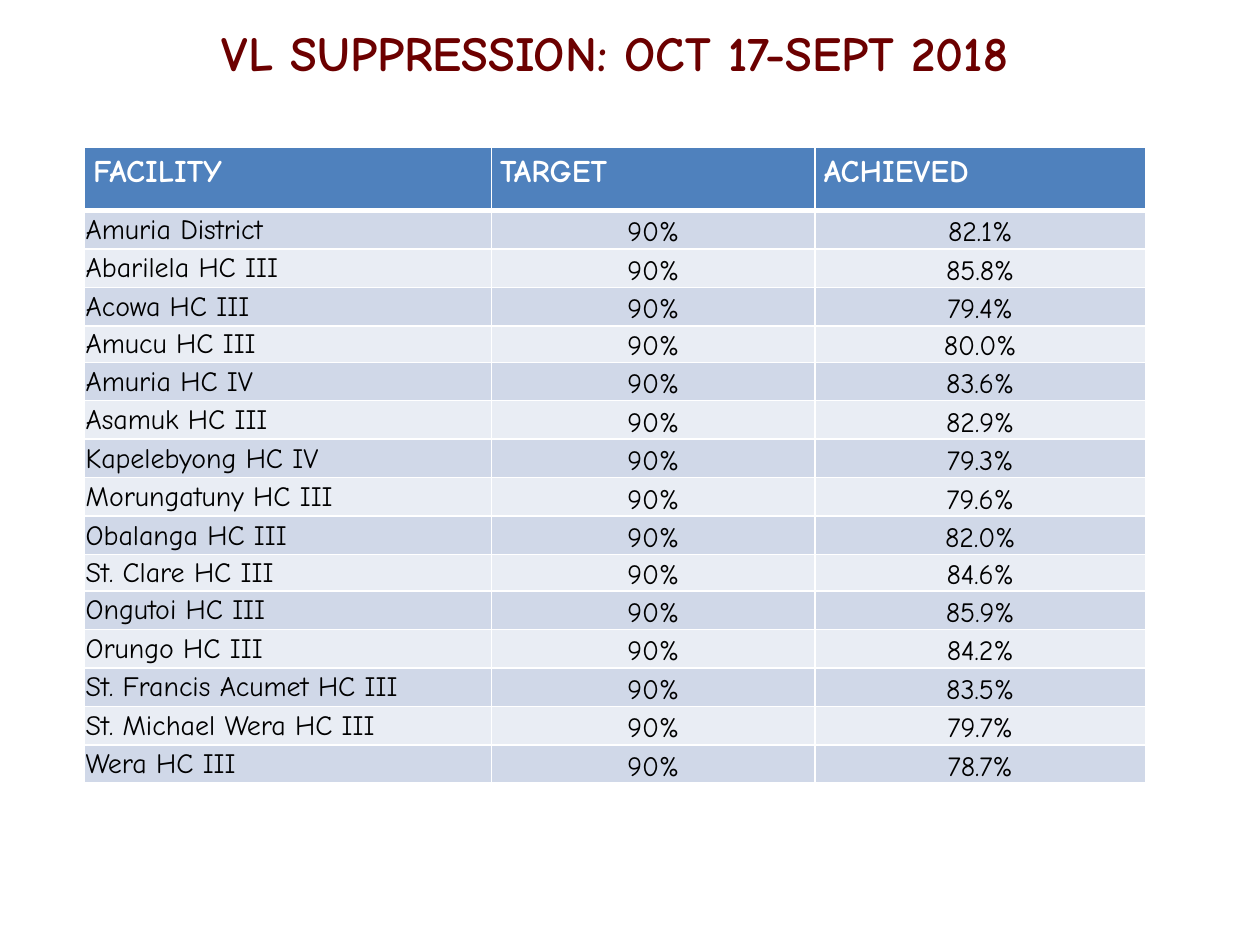
import pptx
import pptx.dml.color
import pptx.enum.text
import pptx.oxml
import pptx.oxml.ns
import pptx.util
from pptx.util import Inches

FONT = "Comic Neue"
ALIGN = pptx.enum.text.PP_ALIGN
ANCHOR = pptx.enum.text.MSO_ANCHOR

HEADER = ["FACILITY", "TARGET", "ACHIEVED"]
TARGET = "90%"
FACILITIES = [
    ("Amuria District", "82.1%"),
    ("Abarilela HC III", "85.8%"),
    ("Acowa HC III", "79.4%"),
    ("Amucu HC III", "80.0%"),
    ("Amuria HC IV", "83.6%"),
    ("Asamuk HC III", "82.9%"),
    ("Kapelebyong HC IV", "79.3%"),
    ("Morungatuny HC III", "79.6%"),
    ("Obalanga HC III", "82.0%"),
    ("St. Clare HC III", "84.6%"),
    ("Ongutoi HC III", "85.9%"),
    ("Orungo HC III", "84.2%"),
    ("St. Francis Acumet HC III", "83.5%"),
    ("St. Michael Wera HC III", "79.7%"),
    ("Wera HC III", "78.7%"),
]
COLUMN_WIDTHS = [3.23, 2.57, 2.62]
TABLE_HEIGHT = 5.05
HEADER_HEIGHT = 0.5
SHORT_HEIGHT = 0.29
SHORT_ROWS = (4, 10)


def rgb(value):
    return pptx.dml.color.RGBColor.from_string(value)


def write(tf, text, size=16, color="000000", bold=False, align=ALIGN.LEFT):
    p = tf.paragraphs[0]
    p.alignment = align
    r = p.add_run()
    r.text = text
    r.font.name = FONT
    r.font.size = pptx.util.Pt(size)
    r.font.bold = bold
    r.font.color.rgb = rgb(color)


def set_borders(cell, color="FFFFFF", top=1, bottom=1):
    tc_pr = cell._tc.get_or_add_tcPr()
    sides = [("lnL", 1), ("lnR", 1), ("lnT", top), ("lnB", bottom)]
    for i, (side, width) in enumerate(sides):
        line = pptx.oxml.parse_xml(
            f'<a:{side} {pptx.oxml.ns.nsdecls("a")} w="{pptx.util.Pt(width)}">'
            f'<a:solidFill><a:srgbClr val="{color}"/></a:solidFill></a:{side}>')
        tc_pr.insert(i, line)


def format_cell(cell, fill, anchor, margins, **borders):
    cell.fill.solid()
    cell.fill.fore_color.rgb = rgb(fill)
    cell.vertical_anchor = anchor
    (cell.margin_left, cell.margin_top,
     cell.margin_right, cell.margin_bottom) = map(Inches, margins)
    set_borders(cell, **borders)


def add_title(s, text):
    sp = s.shapes.add_textbox(Inches(0.57), Inches(-0.13), Inches(8.62), Inches(1.08))
    tf = sp.text_frame
    tf.word_wrap = True
    tf.vertical_anchor = ANCHOR.MIDDLE
    write(tf, text, size=28, color="6C0000", bold=True, align=ALIGN.CENTER)


def add_results_table(s):
    rows = len(FACILITIES) + 1
    table = s.shapes.add_table(
        rows, len(HEADER), Inches(0.67), Inches(1.17),
        Inches(sum(COLUMN_WIDTHS)), Inches(TABLE_HEIGHT)).table

    # Column widths and row heights
    for column, width in zip(table.columns, COLUMN_WIDTHS):
        column.width = Inches(width)
    regular_rows = rows - 1 - len(SHORT_ROWS)
    regular = (TABLE_HEIGHT - HEADER_HEIGHT - len(SHORT_ROWS) * SHORT_HEIGHT) / regular_rows
    for i, row in enumerate(table.rows):
        row.height = Inches(SHORT_HEIGHT if i in SHORT_ROWS else regular)
    table.rows[0].height = Inches(HEADER_HEIGHT)

    # Header row
    for col, text in enumerate(HEADER):
        cell = table.cell(0, col)
        format_cell(cell, "4F81BD", ANCHOR.TOP, (0.07, 0.05, 0.07, 0.05), bottom=3)
        write(cell.text_frame, text, size=18, color="FFFFFF", bold=True)

    # Banded facility rows
    for row, (facility, achieved) in enumerate(FACILITIES, start=1):
        fill = "D0D8E8" if row % 2 else "E9EDF4"
        for col, text in enumerate([facility, TARGET, achieved]):
            cell = table.cell(row, col)
            format_cell(cell, fill, ANCHOR.BOTTOM if col else ANCHOR.MIDDLE,
                        (0.01, 0.01, 0.01, 0), top=3 if row == 1 else 1)
            write(cell.text_frame, text, align=ALIGN.CENTER if col else ALIGN.LEFT)


def main():
    prs = pptx.Presentation()
    prs.slide_width, prs.slide_height = Inches(10), Inches(7.5)
    s = prs.slides.add_slide(prs.slide_layouts[6])
    add_title(s, "VL SUPPRESSION: OCT 17-SEPT 2018")
    add_results_table(s)
    prs.save("out.pptx")


if __name__ == "__main__":
    main()
